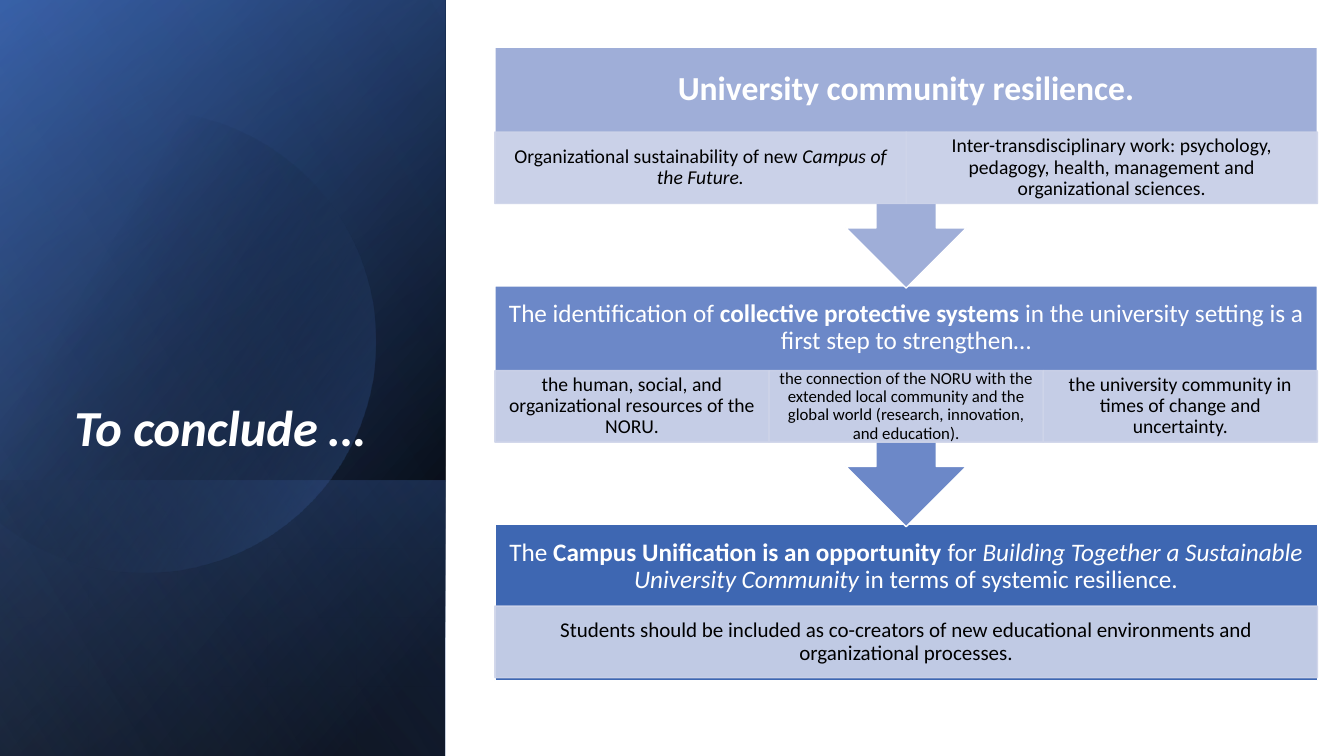
import math

from lxml import etree
from pptx import Presentation
from pptx.dml.color import RGBColor
from pptx.enum.shapes import MSO_SHAPE
from pptx.enum.text import MSO_ANCHOR, PP_ALIGN
from pptx.oxml.ns import qn
from pptx.util import Pt

RECTANGLE = MSO_SHAPE.RECTANGLE
ARROW_CALLOUT = MSO_SHAPE.UP_ARROW_CALLOUT
MIDDLE, BOTTOM = MSO_ANCHOR.MIDDLE, MSO_ANCHOR.BOTTOM
CENTER, LEFT = PP_ALIGN.CENTER, PP_ALIGN.LEFT

WHITE = RGBColor(0xFF, 0xFF, 0xFF)
BLACK = RGBColor(0x00, 0x00, 0x00)
NAVY = RGBColor(0x2F, 0x55, 0x97)
BLUE = RGBColor(0x44, 0x72, 0xC4)
SKY = RGBColor(0x8F, 0xAA, 0xDC)
PALE = RGBColor(0xCF, 0xD5, 0xEA)
STAGE_LIGHT = RGBColor(0x9F, 0xAE, 0xD8)
STAGE_MEDIUM = RGBColor(0x6C, 0x88, 0xC8)
STAGE_DARK = RGBColor(0x3E, 0x67, 0xB2)

FONT = "Calibri"
SLIDE_WIDTH, SLIDE_HEIGHT = 960, 540
PANEL_WIDTH = 318
FLOW_LEFT, FLOW_TOP, FLOW_WIDTH = 353.5, 33.8, 587.5
STAGE_STEP = 170.4
CALLOUT_HEIGHT, LAST_HEIGHT = 172, 111.6
HEADING_HEIGHT, DETAIL_HEIGHT = 60.5, 51.1

# Each run is (text, style), where style holds "b" for bold and "i" for italic.
# Stage: colour, heading size, heading runs, detail offset, [(size, runs)].
STAGES = [
    (STAGE_LIGHT, 24, [("University community resilience.", "b")], 60.5, [
        (14, [("Organizational sustainability of new ", ""),
              ("Campus of the Future.", "i")]),
        (14, [("Inter-transdisciplinary work: psychology, pedagogy, health, "
               "management and organizational sciences.", "")]),
    ]),
    (STAGE_MEDIUM, 18, [
        ("The identification of ", ""),
        ("collective protective systems", "b"),
        (" in the university setting is a first step to strengthen…", ""),
    ], 60.5, [
        (14, [("the human, social, and organizational resources of the NORU.", "")]),
        (12, [("the connection of the NORU with the extended local community and "
               "the global world (research, innovation, and education).", "")]),
        (14, [("the university community in times of change and uncertainty.", "")]),
    ]),
    (STAGE_DARK, 18, [
        ("The ", ""),
        ("Campus Unification is an opportunity", "b"),
        (" for ", ""),
        ("Building Together a Sustainable University Community ", "i"),
        ("in terms of systemic resilience.", ""),
    ], 58.3, [
        (15, [("Students should be included as co-creators of new educational "
               "environments and organizational processes.", "")]),
    ]),
]


def set_opacity(color_element, percent):
    etree.SubElement(color_element, qn("a:alpha"), val=str(percent * 1000))


def set_gradient(shape, stops, angle):
    """Fill with (position, colour, opacity) stops; angle runs clockwise."""
    shape.fill.gradient()
    gradient = shape._element.spPr.find(qn("a:gradFill"))
    for child in list(gradient):
        gradient.remove(child)
    stop_list = etree.SubElement(gradient, qn("a:gsLst"))
    for position, color, opacity in stops:
        stop = etree.SubElement(stop_list, qn("a:gs"), pos=str(position * 1000))
        color_element = etree.SubElement(stop, qn("a:srgbClr"), val=str(color))
        set_opacity(color_element, opacity)
    etree.SubElement(gradient, qn("a:lin"), ang=str(angle * 60000), scaled="0")
    shape.line.fill.background()
    shape.shadow.inherit = False


def add_panel_layer(slide, top, stops, angle):
    """Cover the left panel from top to the slide's foot, turned and mirrored."""
    length = SLIDE_HEIGHT - top
    layer = slide.shapes.add_shape(
        RECTANGLE, Pt((PANEL_WIDTH - length) / 2),
        Pt(top + (length - PANEL_WIDTH) / 2), Pt(length), Pt(PANEL_WIDTH))
    layer.rotation = 90
    layer._element.spPr.find(qn("a:xfrm")).set("flipH", "1")
    set_gradient(layer, stops, angle)


def add_cut_circle(slide, center_x, center_y, radius):
    """Draw the part of the circle that lies right of the slide's left edge."""
    limit = math.acos(-center_x / radius)
    steps = 120
    angles = [limit * (2 * step / steps - 1) for step in range(steps + 1)]
    points = [(Pt(center_x + radius * math.cos(angle)),
               Pt(center_y + radius * math.sin(angle))) for angle in angles]
    outline = slide.shapes.build_freeform(*points[0])
    outline.add_line_segments(points[1:], close=True)
    circle = outline.convert_to_shape()
    set_gradient(circle, [(29, BLACK, 0), (100, BLUE, 43)], 30)


def add_block(slide, kind, top, height, color):
    block = slide.shapes.add_shape(
        kind, Pt(FLOW_LEFT), Pt(top), Pt(FLOW_WIDTH), Pt(height))
    block.fill.solid()
    block.fill.fore_color.rgb = color
    block.line.color.rgb = WHITE
    block.line.width = Pt(1)
    block.shadow.inherit = False
    return block


def write_text(shape, runs, size, color, align=CENTER, anchor=MIDDLE,
               side=None, above=0, below=0):
    frame = shape.text_frame
    frame.word_wrap = True
    frame.vertical_anchor = anchor
    frame.margin_left = frame.margin_right = Pt(size * 0.56 if side is None else side)
    frame.margin_top, frame.margin_bottom = Pt(above), Pt(below)
    paragraph = frame.paragraphs[0]
    paragraph.alignment = align
    paragraph.line_spacing = 0.9
    for text, style in runs:
        run = paragraph.add_run()
        run.text = text
        run.font.name = FONT
        run.font.size = Pt(size)
        run.font.color.rgb = color
        run.font.bold = "b" in style
        run.font.italic = "i" in style


def add_detail(slide, left, top, width, size, runs):
    detail = slide.shapes.add_shape(
        RECTANGLE, Pt(left), Pt(top), Pt(width), Pt(DETAIL_HEIGHT))
    detail.fill.solid()
    detail.fill.fore_color.rgb = PALE
    detail.line.color.rgb = PALE
    detail.line.width = Pt(1)
    detail.shadow.inherit = False
    for color_element in detail._element.spPr.iter(qn("a:srgbClr")):
        set_opacity(color_element, 90)
    write_text(detail, runs, size, BLACK, above=1.4, below=1.4)


def add_stage(slide, index, color, size, heading_runs, detail_offset, details):
    top = FLOW_TOP + index * STAGE_STEP
    if index == len(STAGES) - 1:
        add_block(slide, RECTANGLE, top, LAST_HEIGHT, color)
    else:
        add_block(slide, ARROW_CALLOUT, top, CALLOUT_HEIGHT, color).rotation = 180
    heading = slide.shapes.add_textbox(
        Pt(FLOW_LEFT), Pt(top), Pt(FLOW_WIDTH), Pt(HEADING_HEIGHT))
    write_text(heading, heading_runs, size, WHITE)
    width = FLOW_WIDTH / len(details)
    for column, (detail_size, runs) in enumerate(details):
        add_detail(slide, FLOW_LEFT + column * width, top + detail_offset,
                   width, detail_size, runs)


def main():
    deck = Presentation()
    deck.slide_width, deck.slide_height = Pt(SLIDE_WIDTH), Pt(SLIDE_HEIGHT)
    slide = deck.slides.add_slide(deck.slide_layouts[6])

    add_panel_layer(slide, 0, [(8, BLACK, 100), (100, NAVY, 100)], 50)
    add_panel_layer(slide, 0, [(0, BLACK, 0), (99, BLUE, 46)], 30)
    add_panel_layer(slide, 343, [(2, BLUE, 29), (100, BLACK, 30)], 130)
    add_cut_circle(slide, 103, 244, 165)
    add_panel_layer(slide, 0, [(0, BLACK, 0), (99, SKY, 11)], 120)

    title = slide.shapes.add_textbox(Pt(46), Pt(132.5), Pt(245.5), Pt(286.5))
    write_text(title, [("To conclude …", "bi")], 36, WHITE, LEFT, BOTTOM,
               side=7.2, below=145)

    for index, stage in reversed(list(enumerate(STAGES))):
        add_stage(slide, index, *stage)
    deck.save("out.pptx")


if __name__ == "__main__":
    main()
